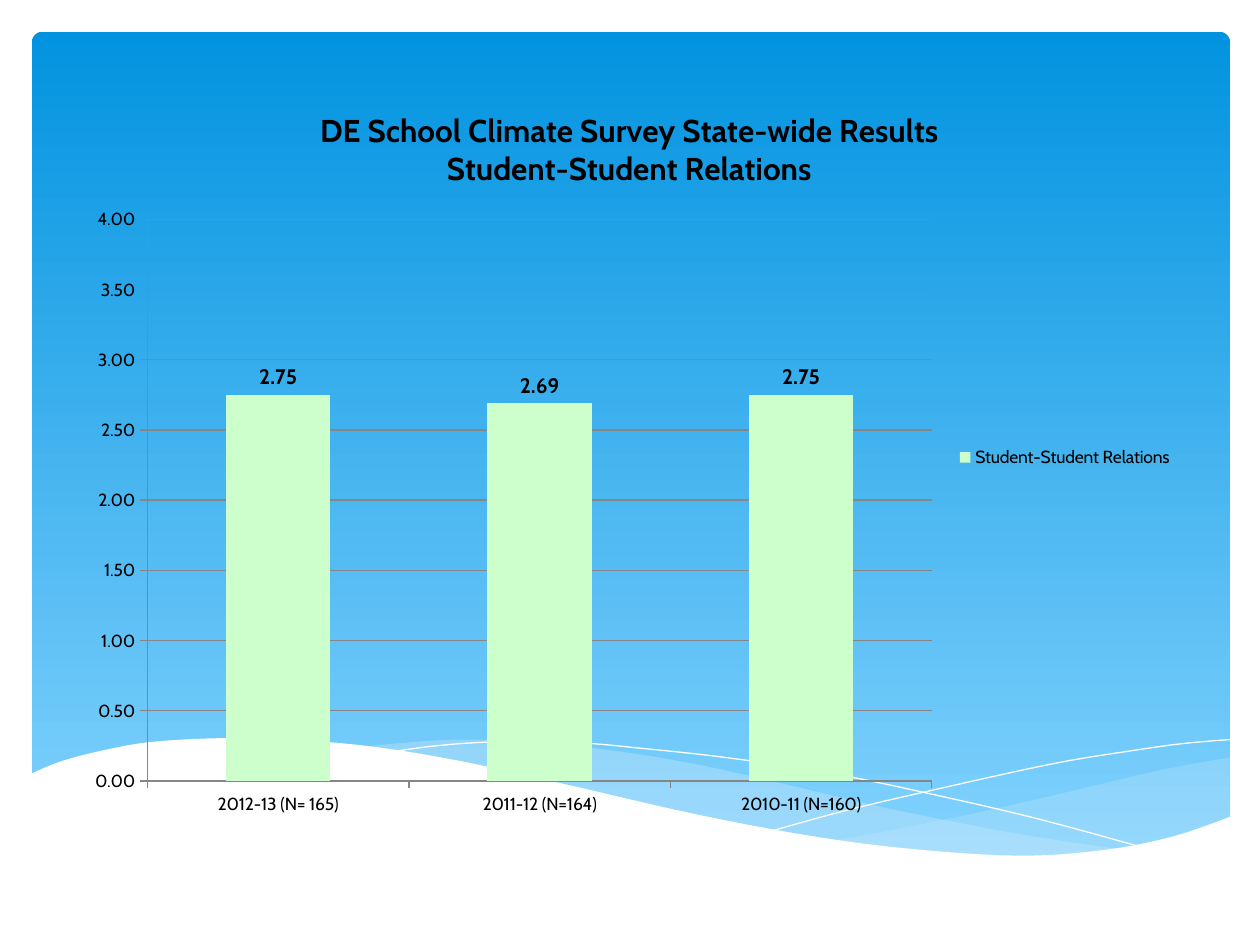
from dataclasses import dataclass

from lxml.etree import SubElement
from pptx import Presentation
from pptx.chart.data import CategoryChartData
from pptx.dml.color import RGBColor
from pptx.enum.chart import XL_CHART_TYPE as ChartType
from pptx.enum.chart import XL_LABEL_POSITION as LabelPosition
from pptx.enum.chart import XL_LEGEND_POSITION as LegendPosition
from pptx.enum.chart import XL_TICK_MARK as TickMark
from pptx.enum.shapes import MSO_SHAPE as Preset
from pptx.oxml import parse_xml
from pptx.oxml.ns import nsdecls, qn
from pptx.util import Cm, Pt

Point = tuple[float, float]
Curve = list[Point]


@dataclass(frozen=True)
class Theme:
    font: str = "Cabin"
    sky_top: str = "0293E0"
    sky_bottom: str = "83D3FE"
    swell: str = "C6E7FC"
    white: str = "FFFFFF"
    bar: str = "CCFFCC"
    axis: str = "868686"
    text: str = "000000"
    title_size: int = 18
    label_size: int = 12
    body_size: int = 10


@dataclass(frozen=True)
class Wave:
    """Curves in centimetres, joined end to end; filled ones are closed."""
    curves: list[Curve]
    filled: bool = True
    color: str = "FFFFFF"
    opacity: int = 100


THEME = Theme()

WAVES = [
    # Right swell
    Wave([[(24.8, 15.27), (23.42, 15.52), (21.89, 15.88), (19.81, 16.36),
           (17.96, 16.74), (16.81, 16.94)],
          [(16.81, 16.94), (18.26, 17.12), (19.56, 17.25), (20.7, 17.27),
           (21.95, 17.2), (23.22, 16.99), (24.16, 16.74), (24.82, 16.48)]],
         color=THEME.swell, opacity=29),
    # Middle swell
    Wave([[(22.71, 17.14), (20.52, 16.81), (17.96, 16.31), (16, 15.85),
           (14.1, 15.42), (12.42, 15.14), (10.67, 14.96), (9.19, 14.91),
           (7.98, 14.99), (7.29, 15.06)],
          [(7.29, 15.06), (8.71, 15.27), (10.29, 15.57), (11.43, 15.85),
           (13.46, 16.31), (15.29, 16.69), (17.3, 17.02), (19.02, 17.22),
           (20.52, 17.27), (21.82, 17.25), (22.71, 17.14)]],
         color=THEME.swell, opacity=40),
    # Thin crest lines
    Wave([[(7.87, 15.16), (8.74, 15.04), (9.86, 14.96), (11.46, 14.96),
           (12.98, 15.09), (14.78, 15.29), (16.92, 15.62), (19.33, 16.13),
           (21.13, 16.56), (23.06, 17.09)]], filled=False),
    Wave([[(15.6, 16.74), (17.09, 16.33), (19.02, 15.88), (21.26, 15.39),
           (22.78, 15.14), (23.85, 14.99), (24.79, 14.91)]], filled=False),
    # White foreground
    Wave([[(24.82, 16.46), (23.62, 16.87), (22.22, 17.14), (20.55, 17.25),
           (18.44, 17.12), (16.46, 16.87), (14.1, 16.43), (11.35, 15.8),
           (9.27, 15.34), (7.42, 15.04), (5.84, 14.91), (4.5, 14.88),
           (3.02, 14.96), (1.93, 15.16), (1.17, 15.37), (0.58, 15.62)],
          [(0.58, 18.57), (24.82, 18.57)]]),
]


def rgb(color: str) -> RGBColor:
    return RGBColor.from_string(color)


def smooth(anchors: Curve, steps: int = 5) -> Curve:
    """Run a Catmull-Rom curve through the anchors."""
    padded = [anchors[0], *anchors, anchors[-1]]
    points = [anchors[0]]
    for a, b, c, d in zip(padded, padded[1:], padded[2:], padded[3:]):
        for step in range(1, steps + 1):
            t = step / steps
            points.append(tuple(
                b[i] + t * (c[i] - a[i]) / 2
                + t**2 * (2 * a[i] - 5 * b[i] + 4 * c[i] - d[i]) / 2
                + t**3 * (3 * b[i] - a[i] - 3 * c[i] + d[i]) / 2
                for i in (0, 1)))
    return points


def draw_wave(slide, wave: Wave) -> None:
    points = [(Cm(x), Cm(y)) for curve in wave.curves for x, y in smooth(curve)]
    builder = slide.shapes.build_freeform(*points[0])
    builder.add_line_segments(points[1:], close=wave.filled)
    shape = builder.convert_to_shape()
    shape.shadow.inherit = False
    if not wave.filled:
        shape.fill.background()
        shape.line.color.rgb = rgb(wave.color)
        shape.line.width = Pt(0)
        return
    shape.line.fill.background()
    shape.fill.solid()
    shape.fill.fore_color.rgb = rgb(wave.color)
    if wave.opacity < 100:
        color = shape.fill._xPr.find(f".//{qn('a:srgbClr')}")
        SubElement(color, qn("a:alpha"), val=str(wave.opacity * 1000))


def draw_sky(slide) -> None:
    sky = slide.shapes.add_shape(
        Preset.ROUNDED_RECTANGLE, Cm(0.64), Cm(0.64), Cm(24.16), Cm(16.76))
    sky.adjustments[0] = 0.013
    sky.shadow.inherit = False
    sky.line.fill.background()
    sky.fill.gradient()
    sky.fill.gradient_angle = 270
    for stop, color in zip(sky.fill.gradient_stops,
                           (THEME.sky_top, THEME.sky_bottom)):
        stop.color.rgb = rgb(color)


def style_font(font, size: int, bold: bool = False) -> None:
    font.name = THEME.font
    font.size = Pt(size)
    font.bold = bold
    font.color.rgb = rgb(THEME.text)


def style_line(line) -> None:
    line.color.rgb = rgb(THEME.axis)
    line.width = Pt(0.75)


def place_plot(chart, x: float, y: float, w: float, h: float) -> None:
    """Fix the inner plot area, in fractions of the chart."""
    plot_area = chart._chartSpace.chart.plotArea
    for old in plot_area.findall(qn("c:layout")):
        plot_area.remove(old)
    sizes = "".join(f'<c:{name} val="{value}"/>'
                    for name, value in zip("xywh", (x, y, w, h)))
    plot_area.insert(0, parse_xml(
        f'<c:layout {nsdecls("c")}><c:manualLayout>'
        '<c:layoutTarget val="inner"/><c:xMode val="edge"/>'
        f'<c:yMode val="edge"/>{sizes}</c:manualLayout></c:layout>'))


def draw_survey_chart(slide) -> None:
    data = CategoryChartData(number_format="0.00")
    data.categories = ["2012-13 (N= 165)", "2011-12 (N=164)", "2010-11 (N=160)"]
    data.add_series("Student-Student Relations", [2.75, 2.69, 2.75])
    chart = slide.shapes.add_chart(ChartType.COLUMN_CLUSTERED, Cm(1.47), Cm(1.7),
                                   Cm(22.43), Cm(15.04), data).chart
    style_font(chart.font, THEME.body_size)

    # Title
    frame = chart.chart_title.text_frame
    chart.chart_title.include_in_layout = False
    for index, line in enumerate(["DE School Climate Survey State-wide Results",
                                  "Student-Student Relations"]):
        paragraph = frame.add_paragraph() if index else frame.paragraphs[0]
        run = paragraph.add_run()
        run.text = line
        style_font(run.font, THEME.title_size, bold=True)

    # Legend
    chart.has_legend = True
    chart.legend.position = LegendPosition.RIGHT
    chart.legend.include_in_layout = False
    style_font(chart.legend.font, THEME.body_size)

    # Axes
    for axis in (chart.category_axis, chart.value_axis):
        axis.major_tick_mark = TickMark.OUTSIDE
        axis.minor_tick_mark = TickMark.NONE
        style_line(axis.format.line)
        style_font(axis.tick_labels.font, THEME.body_size)
    values = chart.value_axis
    values.minimum_scale, values.maximum_scale, values.major_unit = 0, 4, 0.5
    values.tick_labels.number_format = "0.00"
    values.tick_labels.number_format_is_linked = False
    style_line(values.major_gridlines.format.line)

    # Columns and their labels
    plot = chart.plots[0]
    plot.gap_width = 150
    plot.vary_by_categories = False
    series = plot.series[0]
    series.format.fill.solid()
    series.format.fill.fore_color.rgb = rgb(THEME.bar)
    labels = series.data_labels
    labels.show_value = True
    labels.position = LabelPosition.OUTSIDE_END
    labels.number_format = "0.00"
    labels.number_format_is_linked = False
    style_font(labels.font, THEME.label_size, bold=True)
    place_plot(chart, 0.067, 0.181, 0.705, 0.753)


def main() -> None:
    presentation = Presentation()
    presentation.slide_width, presentation.slide_height = Cm(25.4), Cm(19.05)
    slide = presentation.slides.add_slide(presentation.slide_layouts[6])
    draw_sky(slide)
    for wave in WAVES:
        draw_wave(slide, wave)
    draw_survey_chart(slide)
    presentation.save("out.pptx")


if __name__ == "__main__":
    main()
